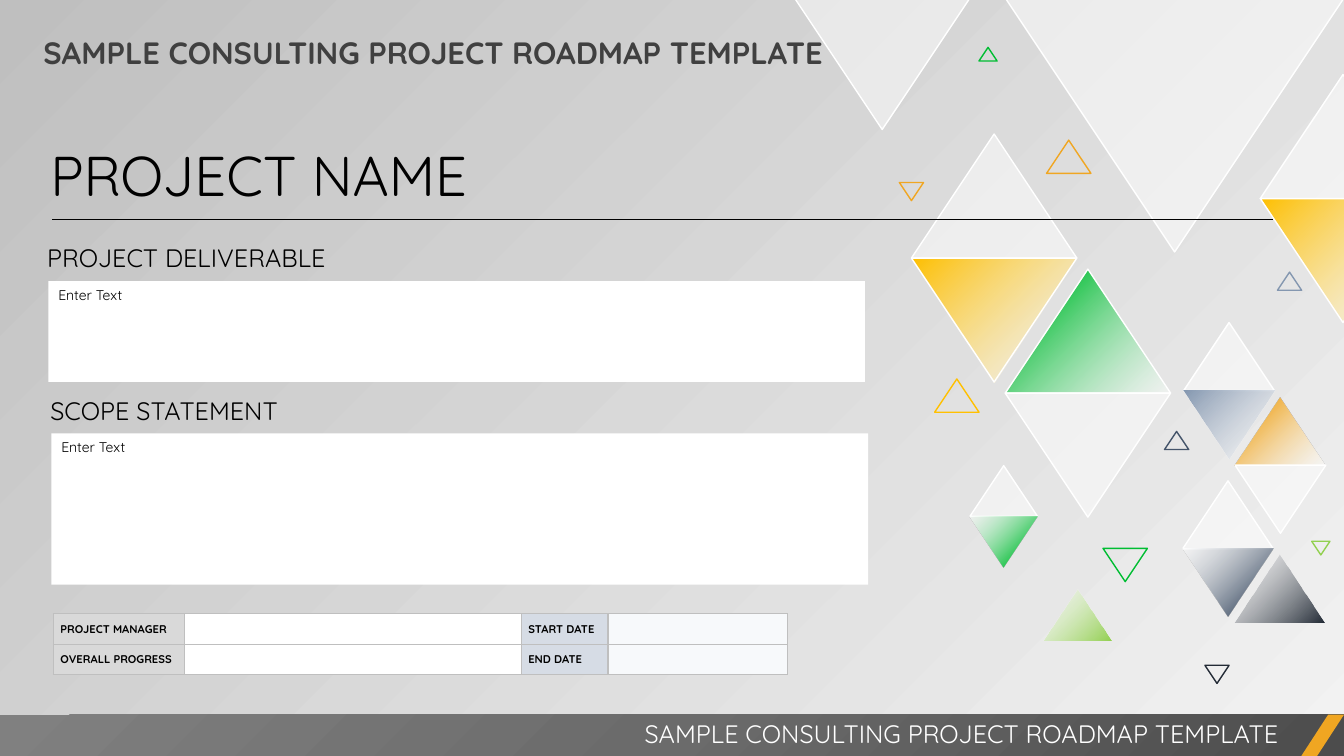
from dataclasses import dataclass
from lxml.etree import SubElement
from pptx import Presentation
from pptx.dml.color import RGBColor
from pptx.enum.shapes import MSO_CONNECTOR as LINE, MSO_SHAPE as SHAPE
from pptx.enum.text import MSO_ANCHOR as ANCHOR, MSO_AUTO_SIZE as AUTO, PP_ALIGN as ALIGN
from pptx.oxml.ns import qn
from pptx.util import Inches, Pt


@dataclass(frozen=True)
class Theme:
    """Colours, font and type sizes of the slide."""
    font: str = "Quicksand"
    name_size: int = 40
    title_size: int = 22
    heading_size: int = 18
    body_size: int = 10
    table_size: int = 8
    white: str = "FFFFFF"
    black: str = "000000"
    title: str = "404040"
    light: str = "F2F2F2"
    border: str = "BFBFBF"
    label: str = "D9D9D9"
    date_label: str = "D6DCE5"
    date_value: str = "F7F9FB"
    yellow: str = "FFC000"
    green: str = "00BD32"
    orange: str = "F0A622"
    lime: str = "92D050"
    steel: str = "8497B0"
    slate: str = "44546A"
    ink: str = "222A35"
    bar: tuple = ("4C4C4C", "6B6B6B", "808080")


T = Theme()
GLASS = "glass"
FADE_FIRST = (T.green, T.orange, T.slate)
TITLE = "SAMPLE CONSULTING PROJECT ROADMAP TEMPLATE"

DIAMONDS = [
    (9.04, 1.33, 1.64, GLASS, T.yellow),
    (9.97, 2.67, 1.64, T.green, GLASS),
    (12.5, 0.74, 1.64, GLASS, T.yellow),
    (11.73, 4.77, 0.9, GLASS, T.slate),
    (11.74, 3.2, 0.9, GLASS, T.steel),
    (12.25, 3.94, 0.9, T.orange, GLASS),
    (9.62, 4.62, 0.67, GLASS, T.green),
]
SINGLES = [
    (9.97, -0.02, 3.36, GLASS, True),
    (7.88, -0.02, 1.74, GLASS, True),
    (12.24, 5.5, 0.9, T.ink, False),
    (10.35, 5.85, 0.67, T.lime, False),
]
OUTLINES = [
    (10.94, 5.44, 0.44, T.green, True),
    (9.27, 3.76, 0.44, T.yellow, False),
    (10.38, 1.39, 0.44, T.orange, False),
    (11.55, 4.28, 0.24, T.slate, False),
    (11.95, 6.6, 0.24, T.ink, True),
    (8.92, 1.81, 0.24, T.orange, True),
    (12.67, 2.7, 0.24, T.steel, False),
    (9.71, 0.47, 0.18, T.green, False),
    (13.01, 5.37, 0.18, T.lime, True),
]


def rgb(color):
    """Turn a hex string into a colour."""
    return RGBColor.from_string(color)


def set_alpha(color_el, percent):
    """Set the opacity of a colour element."""
    SubElement(color_el, qn("a:alpha"), val=str(percent * 1000))


def set_gradient(props, stops, radial=False):
    """Replace the solid fill in props by (position, colour, opacity) stops."""
    solid = props.find(qn("a:solidFill"))
    grad = props.makeelement(qn("a:gradFill"), {"rotWithShape": "1"})
    props.replace(solid, grad)
    stop_list = SubElement(grad, qn("a:gsLst"))
    for pos, color, opacity in stops:
        stop = SubElement(stop_list, qn("a:gs"), pos=str(pos * 1000))
        color_el = SubElement(stop, qn("a:srgbClr"), val=color)
        if opacity < 100:
            set_alpha(color_el, opacity)
    if radial:
        shade = SubElement(grad, qn("a:path"), {"path": "circle"})
        SubElement(shade, qn("a:fillToRect"), l="100000", t="100000")
    else:
        SubElement(grad, qn("a:lin"), ang=str(225 * 60000), scaled="0")


def add_block(shapes, kind, x, y, w, h, fill=None, line=None):
    """Add a preset shape with a plain fill and line."""
    sp = shapes.add_shape(kind, Inches(x), Inches(y), Inches(w), Inches(h))
    sp.shadow.inherit = False
    if fill:
        sp.fill.solid()
        sp.fill.fore_color.rgb = rgb(fill)
    else:
        sp.fill.background()
    if line:
        sp.line.color.rgb = rgb(line)
        sp.line.width = Pt(1)
    else:
        sp.line.fill.background()
    return sp


def write(tf, text, size, color=T.black, bold=False, align=ALIGN.LEFT):
    """Write one formatted paragraph at the top of a text frame."""
    tf.word_wrap = True
    tf.auto_size = AUTO.NONE
    tf.vertical_anchor = ANCHOR.TOP
    p = tf.paragraphs[0]
    p.text = text
    p.alignment = align
    p.font.name = T.font
    p.font.size = Pt(size)
    p.font.bold = bold
    p.font.color.rgb = rgb(color)


def add_text(s, x, y, w, h, *args, **kwargs):
    """Add a text box and write in it."""
    box = s.shapes.add_textbox(Inches(x), Inches(y), Inches(w), Inches(h))
    write(box.text_frame, *args, **kwargs)


def add_triangle(shapes, x, y, w, look, down):
    """Add a filled triangle, either glass or fading to white."""
    edged = look == GLASS or w > 1
    fill = T.white if look == GLASS else look
    sp = add_block(shapes, SHAPE.ISOSCELES_TRIANGLE, x, y, w, w * 0.75,
                   fill, T.white if edged else None)
    sp.rotation = 180 if down else 0
    props = sp.element.spPr
    if look == GLASS:
        set_alpha(props.find(qn("a:solidFill"))[0], 50)
    elif look in FADE_FIRST:
        set_gradient(props, [(0, T.white, 50), (82, look, 100)])
    else:
        set_gradient(props, [(0, look, 100), (100, T.white, 50)])


def add_triangles(s):
    """Draw the triangle pattern as one group."""
    group = s.shapes.add_group_shape()
    for x, y, w, top, bottom in DIAMONDS:
        add_triangle(group.shapes, x, y, w, top, False)
        add_triangle(group.shapes, x, y + w * 0.75, w, bottom, True)
    for single in SINGLES:
        add_triangle(group.shapes, *single)
    for x, y, w, color, down in OUTLINES:
        sp = add_block(group.shapes, SHAPE.ISOSCELES_TRIANGLE, x, y, w, w * 0.75, line=color)
        sp.rotation = 180 if down else 0
    return group


def add_title(s, group, x, y, w, h):
    """Place the title in front of the triangles."""
    title = s.shapes.title
    title.left, title.top, title.width, title.height = map(Inches, (x, y, w, h))
    write(title.text_frame, TITLE, T.title_size, T.title, bold=True)
    group.element.addnext(title.element)


def add_footer(s, x, y, w, h):
    """Draw the footer bar with its caption and slanted accent."""
    bar = add_block(s.shapes, SHAPE.RECTANGLE, x, y, w, h, T.bar[0])
    set_gradient(bar.element.spPr, [(i * 50, c, 100) for i, c in enumerate(T.bar)], radial=True)
    accent = add_block(s.shapes, SHAPE.PARALLELOGRAM, x + w - 0.43, y, 0.43, h, T.orange)
    accent.adjustments[0] = 0.65
    add_text(s, x + 5.25, y - 0.01, 7.53, 0.4, TITLE, T.heading_size, T.white, align=ALIGN.RIGHT)


def add_project_name(s, x, y, w):
    """Write the project name above a thin rule."""
    add_text(s, x - 0.12, y - 0.83, w, 0.77, "PROJECT NAME", T.name_size)
    rule = s.shapes.add_connector(LINE.STRAIGHT, Inches(x), Inches(y), Inches(x + w), Inches(y))
    rule.line.color.rgb = rgb(T.black)
    rule.line.width = Pt(0.5)
    SubElement(rule.element.spPr, qn("a:effectLst"))


def add_panel(s, x, y, w, h, heading):
    """Draw a white entry box under its heading."""
    add_text(s, x - 0.11, y - 0.43, 3.05, 0.4, heading, T.heading_size)
    box = add_block(s.shapes, SHAPE.RECTANGLE, x, y, w, h, T.white)
    write(box.text_frame, "Enter Text", T.body_size)


def add_status_table(s, x, y, widths, row_h):
    """Add the manager, progress and dates table."""
    rows = [("PROJECT MANAGER", "", "START DATE", ""), ("OVERALL PROGRESS", "", "END DATE", "")]
    fills = (T.label, T.white, T.date_label, T.date_value)
    frame = s.shapes.add_table(2, 4, Inches(x), Inches(y), Inches(sum(widths)), Inches(2 * row_h))
    table = frame.table
    for col, width in zip(table.columns, widths):
        col.width = Inches(width)
    for r, texts in enumerate(rows):
        for c, (text, fill) in enumerate(zip(texts, fills)):
            cell = table.cell(r, c)
            write(cell.text_frame, text, T.table_size, bold=True)
            cell.text_frame.paragraphs[0].line_spacing = 1.07
            cell.vertical_anchor = ANCHOR.MIDDLE
            cell.margin_left = cell.margin_right = Inches(0.07)
            cell.margin_top = cell.margin_bottom = 0
            props = cell._tc.get_or_add_tcPr()
            for side in ("lnL", "lnR", "lnT", "lnB"):
                edge = SubElement(props, qn(f"a:{side}"), w=str(Pt(1)))
                SubElement(SubElement(edge, qn("a:solidFill")), qn("a:srgbClr"), val=T.border)
            cell.fill.solid()
            cell.fill.fore_color.rgb = rgb(fill)


def build_slide(prs):
    """Build the project overview slide."""
    s = prs.slides.add_slide(prs.slide_layouts[5])
    s.background.fill.solid()
    s.background.fill.fore_color.rgb = rgb(T.light)
    set_gradient(s.element.find(".//" + qn("p:bgPr")), [(0, T.light, 40), (100, T.border, 100)])
    add_title(s, add_triangles(s), 0.33, 0.28, 8.61, 0.47)
    add_footer(s, 0, 7.09, 13.33, 0.42)
    add_project_name(s, 0.52, 2.18, 12.11)
    add_status_table(s, 0.53, 6.09, (1.3, 3.34, 0.86, 1.78), 0.3)
    add_panel(s, 0.48, 2.79, 8.1, 1, "PROJECT DELIVERABLE")
    add_panel(s, 0.51, 4.3, 8.1, 1.5, "SCOPE STATEMENT")


def main():
    """Create the presentation."""
    prs = Presentation()
    prs.slide_width, prs.slide_height = Inches(13.33), Inches(7.5)
    build_slide(prs)
    prs.save("out.pptx")


if __name__ == "__main__":
    main()
